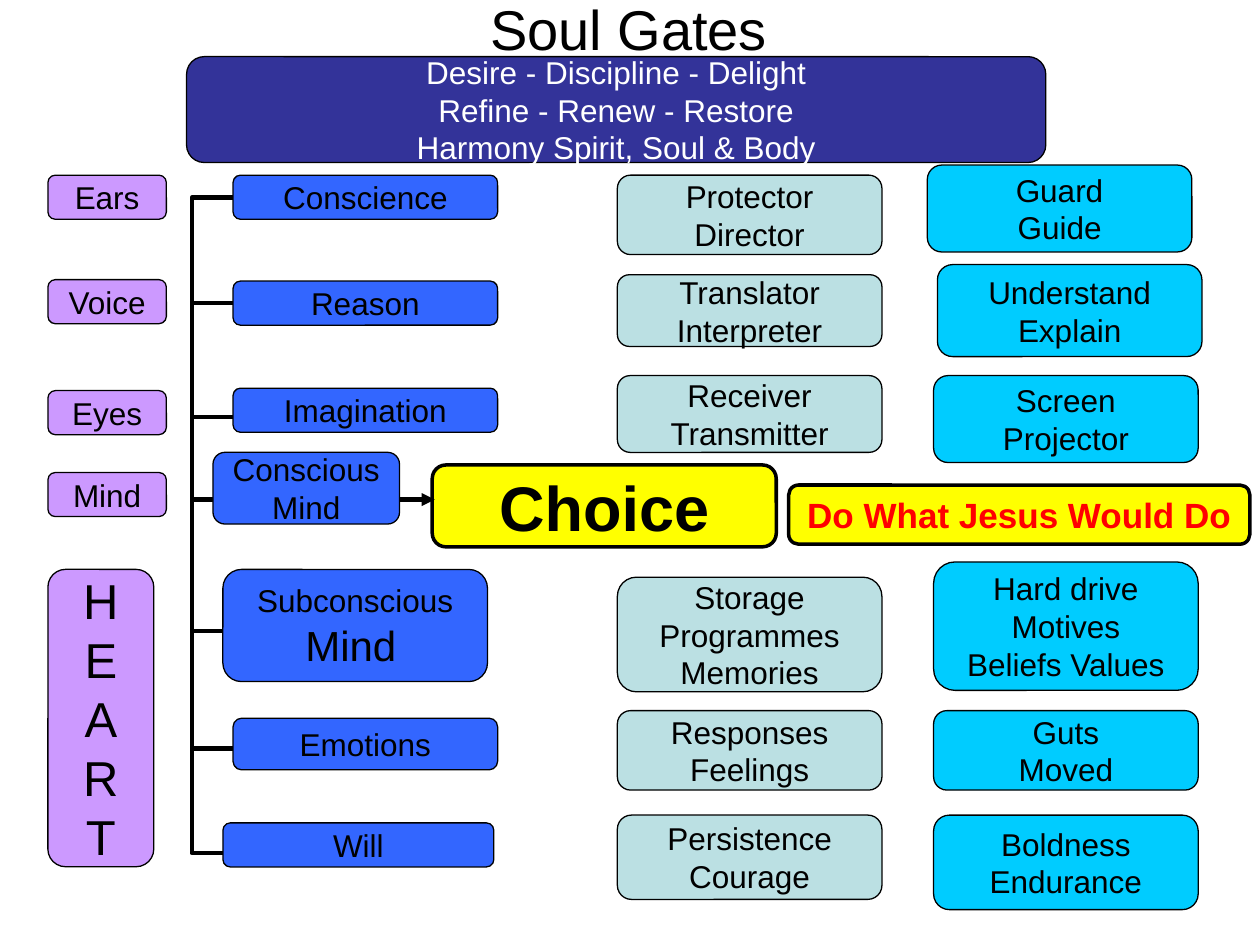
"""Build the Soul Gates slide: gates, soul faculties, their roles and the central choice."""
from dataclasses import dataclass

from lxml import etree
from pptx import Presentation
from pptx.dml.color import RGBColor
from pptx.enum.shapes import MSO_CONNECTOR, MSO_SHAPE
from pptx.enum.text import MSO_ANCHOR, PP_ALIGN
from pptx.oxml.ns import qn
from pptx.util import Pt

BOX = MSO_SHAPE.FLOWCHART_ALTERNATE_PROCESS
STRAIGHT = MSO_CONNECTOR.STRAIGHT
CENTER = PP_ALIGN.CENTER
MIDDLE = MSO_ANCHOR.MIDDLE
LEFT_SIDE = 1


@dataclass(frozen=True)
class Theme:
    font: str = "Arial"
    ink: str = "000000"
    white: str = "FFFFFF"
    alert: str = "FF0000"
    banner: str = "333399"
    gate: str = "CC99FF"
    faculty: str = "3366FF"
    role: str = "BBE0E3"
    action: str = "00CCFF"
    choice: str = "FFFF00"
    body: int = 18
    motto: int = 20
    mind: int = 24
    heart: int = 28
    title: int = 32
    big: int = 36
    thin: float = 0.75
    thick: float = 2
    wire: float = 2.5


T = Theme()
FRAME = {
    "margin_left": 0, "margin_top": 0, "margin_right": 0, "margin_bottom": 0,
    "vertical_anchor": MIDDLE, "word_wrap": False,
}

SPINE_X = 109.6
GATES = [
    ("Ears", 100.1), ("Voice", 159.8), ("Eyes", 223.2), ("Mind", 270),
]
FACULTIES = [
    ("Conscience", 133.2, 100.1, 151.2, 25.2),
    ("Reason", 133.2, 160.6, 151.2, 25.2),
    ("Imagination", 133.2, 221.8, 151.2, 25.2),
    ("Emotions", 133.2, 410.4, 151.2, 29.5),
    ("Will", 127.4, 470.2, 154.8, 25.2),
]
ROLES = [
    ("Protector\vDirector", 100.1, 45.4),
    ("Translator\vInterpreter", 157, 41),
    ("Receiver\vTransmitter", 214.6, 43.9),
    ("Storage\vProgrammes\vMemories", 329.8, 65.5),
    ("Responses\vFeelings", 406.1, 45.4),
    ("Persistence\vCourage", 465.8, 48.2),
]
ACTIONS = [
    ("Guard\vGuide", 529.9, 94.3, 49.7),
    ("Understand\vExplain", 535.7, 151.2, 52.6),
    ("Screen\vProjector", 533.5, 214.6, 49.7),
    ("Hard drive\vMotives\nBeliefs Values", 533.5, 321.1, 73.4),
    ("Guts\vMoved", 533.5, 406.1, 45.4),
    ("Boldness\vEndurance", 533.5, 465.8, 54),
]


def apply(obj, values):
    for name, value in values.items():
        setattr(obj, name, value)


def add_run(p, text, size, color=T.ink, bold=False):
    r = p.add_run()
    r.text = text
    apply(r.font, {"name": T.font, "size": Pt(size), "bold": bold})
    r.font.color.rgb = RGBColor.from_string(color)


def fill_text(tf, text, size=T.body, color=T.ink, bold=False):
    apply(tf, FRAME)
    for i, para in enumerate(text.split("\n")):
        p = tf.add_paragraph() if i else tf.paragraphs[0]
        p.alignment = CENTER
        for j, line in enumerate(para.split("\v")):
            if j:
                p.add_line_break()
            add_run(p, line, size, color, bold)


def style_line(line, width):
    line.color.rgb = RGBColor.from_string(T.ink)
    line.width = Pt(width)


def add_box(s, text, x, y, w, h, fill, border=T.thin, **font):
    sp = s.shapes.add_shape(BOX, Pt(x), Pt(y), Pt(w), Pt(h))
    sp.shadow.inherit = False
    sp.fill.solid()
    sp.fill.fore_color.rgb = RGBColor.from_string(fill)
    style_line(sp.line, border)
    fill_text(sp.text_frame, text, **font)
    return sp


def add_wire(s, x1, y1, x2, y2, arrow=False):
    cx = s.shapes.add_connector(STRAIGHT, Pt(x1), Pt(y1), Pt(x2), Pt(y2))
    style_line(cx.line, T.wire)
    etree.SubElement(cx._element.spPr, qn("a:effectLst"))
    if arrow:
        etree.SubElement(cx.line._get_or_add_ln(), qn("a:tailEnd"), type="triangle")
    return cx


def add_bracket(s, *points):
    start, *rest = [(Pt(x), Pt(y)) for x, y in points]
    builder = s.shapes.build_freeform(*start)
    builder.add_line_segments(rest, close=False)
    sp = builder.convert_to_shape()
    sp.shadow.inherit = False
    sp.fill.background()
    style_line(sp.line, T.wire)


def add_title(s):
    sp = s.shapes.add_textbox(Pt(35.3), Pt(0), Pt(648), Pt(31.7))
    fill_text(sp.text_frame, "Soul Gates", T.title)
    sp.text_frame.word_wrap = True


def add_wires(s, reason):
    add_bracket(s, (127.4, 360.7), (SPINE_X, 360.7), (SPINE_X, 487.4), (127.4, 487.4))
    add_bracket(s, (133.2, 113), (SPINE_X, 113), (SPINE_X, 362.9))
    for y in (427.7, 238.3):
        add_wire(s, 133.2, y, SPINE_X, y)
    add_wire(s, 133.2, 173.2, SPINE_X, 173.2).begin_connect(reason, LEFT_SIDE)
    add_wire(s, SPINE_X, 285.5, 248.4, 285.5, arrow=True)


def main():
    prs = Presentation()
    prs.slide_width, prs.slide_height = Pt(720), Pt(540)
    s = prs.slides.add_slide(prs.slide_layouts[6])

    add_title(s)
    add_box(s, "Desire - Discipline - Delight\vRefine - Renew - Restore\v"
            "Harmony Spirit, Soul & Body", 106.6, 32.4, 491, 60.5, T.banner, color=T.white)
    faculties = {name: add_box(s, name, *place, T.faculty) for name, *place in FACULTIES}
    sub = add_box(s, "Subconscious\v", 127.4, 325.4, 151.2, 64.1, T.faculty)
    p = sub.text_frame.paragraphs[0]
    add_run(p, "Mind", T.mind)
    add_run(p, " ", T.body)

    for text, y in GATES:
        add_box(s, text, 27.4, y, 67.7, 25.2, T.gate)
    add_box(s, "\v".join("HEART"), 27.4, 325.4, 60.5, 169.9, T.gate, size=T.heart)
    for text, y, h in ROLES:
        add_box(s, text, 352.8, y, 151.2, h, T.role)
    for text, x, y, h in ACTIONS:
        add_box(s, text, x, y, 151.2, h, T.action)

    add_box(s, "Choice", 247, 265.7, 196.6, 46.8, T.choice, T.thick, size=T.big, bold=True)
    add_box(s, "Do What Jesus Would Do", 450.7, 277.2, 263.5, 33.8, T.choice, T.thick,
            size=T.motto, color=T.alert, bold=True)
    add_wires(s, faculties["Reason"])
    add_box(s, "Conscious\vMind", 121.7, 258.5, 106.6, 41, T.faculty)
    prs.save("out.pptx")


if __name__ == "__main__":
    main()
